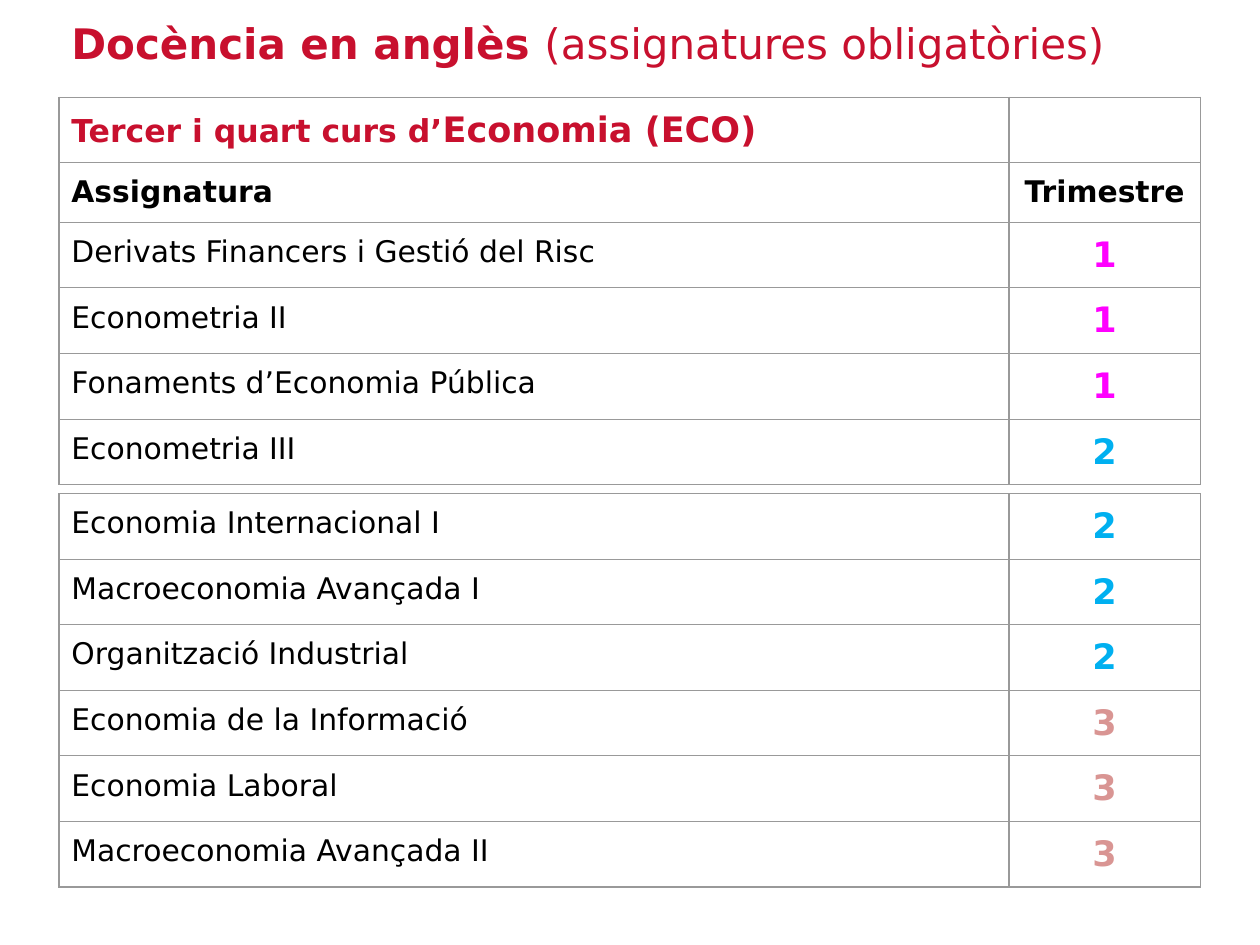
from lxml import etree
from pptx import Presentation
from pptx.dml.color import RGBColor
from pptx.enum.text import PP_ALIGN
from pptx.oxml.ns import qn
from pptx.util import Cm, Pt

LEFT, CENTER = PP_ALIGN.LEFT, PP_ALIGN.CENTER

RED = RGBColor(0xC8, 0x10, 0x2E)
BLACK = RGBColor(0x00, 0x00, 0x00)
WHITE = RGBColor(0xFF, 0xFF, 0xFF)
BORDER_GREY = RGBColor(0x99, 0x99, 0x99)
TERM_COLORS = {
    "1": RGBColor(0xFF, 0x00, 0xFF),
    "2": RGBColor(0x00, 0xB0, 0xF0),
    "3": RGBColor(0xD9, 0x95, 0x93),
}

FONT = "DejaVu Sans"
LEFT_EDGE = Cm(1.19)
COLUMN_WIDTHS = (Cm(19.15), Cm(3.86))
CELL_MARGIN = Cm(0.25)

# Each run is (text, size, bold, colour).
TITLE = [
    ("Docència en anglès ", 24, True, RED),
    ("(assignatures obligatòries)", 24, False, RED),
]
COURSE = [
    ("Tercer i quart curs d’", 18, True, RED),
    ("Economia (ECO)", 20, True, RED),
]
HEADINGS = ("Assignatura", "Trimestre")
FIRST_SUBJECTS = [
    ("Derivats Financers i Gestió del Risc", "1"),
    ("Econometria II", "1"),
    ("Fonaments d’Economia Pública", "1"),
    ("Econometria III", "2"),
]
SECOND_SUBJECTS = [
    ("Economia Internacional I", "2"),
    ("Macroeconomia Avançada I", "2"),
    ("Organització Industrial", "2"),
    ("Economia de la Informació", "3"),
    ("Economia Laboral", "3"),
    ("Macroeconomia Avançada II", "3"),
]


def write_runs(text_frame, runs, alignment=LEFT):
    """Fill the first paragraph of a text frame with formatted runs."""
    paragraph = text_frame.paragraphs[0]
    paragraph.alignment = alignment
    for text, size, bold, color in runs:
        run = paragraph.add_run()
        run.text = text
        for name, value in {"name": FONT, "size": Pt(size), "bold": bold}.items():
            setattr(run.font, name, value)
        run.font.color.rgb = color


def draw_borders(cell):
    """Give a cell a thin grey line on all four sides."""
    properties = cell._tc.get_or_add_tcPr()
    for side in ("a:lnL", "a:lnR", "a:lnT", "a:lnB"):
        line = etree.SubElement(properties, qn(side), w=str(Pt(0.75)))
        fill = etree.SubElement(line, qn("a:solidFill"))
        etree.SubElement(fill, qn("a:srgbClr"), val=str(BORDER_GREY))


def subject_rows(subjects):
    """Turn subjects and terms into rows of runs."""
    return [
        ([(subject, 17, False, BLACK)], [(term, 20, True, TERM_COLORS[term])])
        for subject, term in subjects
    ]


def add_subject_table(slide, top, row_height, rows, fill_first_row=False):
    """Add a two-column table of subjects and terms."""
    frame = slide.shapes.add_table(
        len(rows), len(COLUMN_WIDTHS), LEFT_EDGE, top,
        sum(COLUMN_WIDTHS), row_height * len(rows))
    table = frame.table
    table.first_row = table.horz_banding = False
    for column, width in zip(table.columns, COLUMN_WIDTHS):
        column.width = width
    for row_index, row in enumerate(rows):
        table.rows[row_index].height = row_height
        for cell, runs, alignment in zip(
                table.rows[row_index].cells, row, (LEFT, CENTER)):
            for side in ("left", "right", "top", "bottom"):
                setattr(cell, f"margin_{side}", CELL_MARGIN)
            draw_borders(cell)
            if fill_first_row and row_index == 0:
                cell.fill.solid()
                cell.fill.fore_color.rgb = WHITE
            else:
                cell.fill.background()
            write_runs(cell.text_frame, runs, alignment)


def add_title(slide):
    """Add the title above the tables."""
    box = slide.shapes.add_textbox(
        LEFT_EDGE, Cm(0.23), sum(COLUMN_WIDTHS), Cm(1.27))
    box.text_frame.word_wrap = True
    write_runs(box.text_frame, TITLE)


presentation = Presentation()
presentation.slide_width, presentation.slide_height = Cm(25.4), Cm(19.05)
slide = presentation.slides.add_slide(presentation.slide_layouts[6])

heading_rows = [
    (COURSE, []),
    [[(heading, 17, True, BLACK)] for heading in HEADINGS],
]
add_subject_table(slide, Cm(9.95), Cm(1.3), subject_rows(SECOND_SUBJECTS))
add_subject_table(slide, Cm(1.96), Cm(1.17),
                  heading_rows + subject_rows(FIRST_SUBJECTS),
                  fill_first_row=True)
add_title(slide)
presentation.save("out.pptx")
